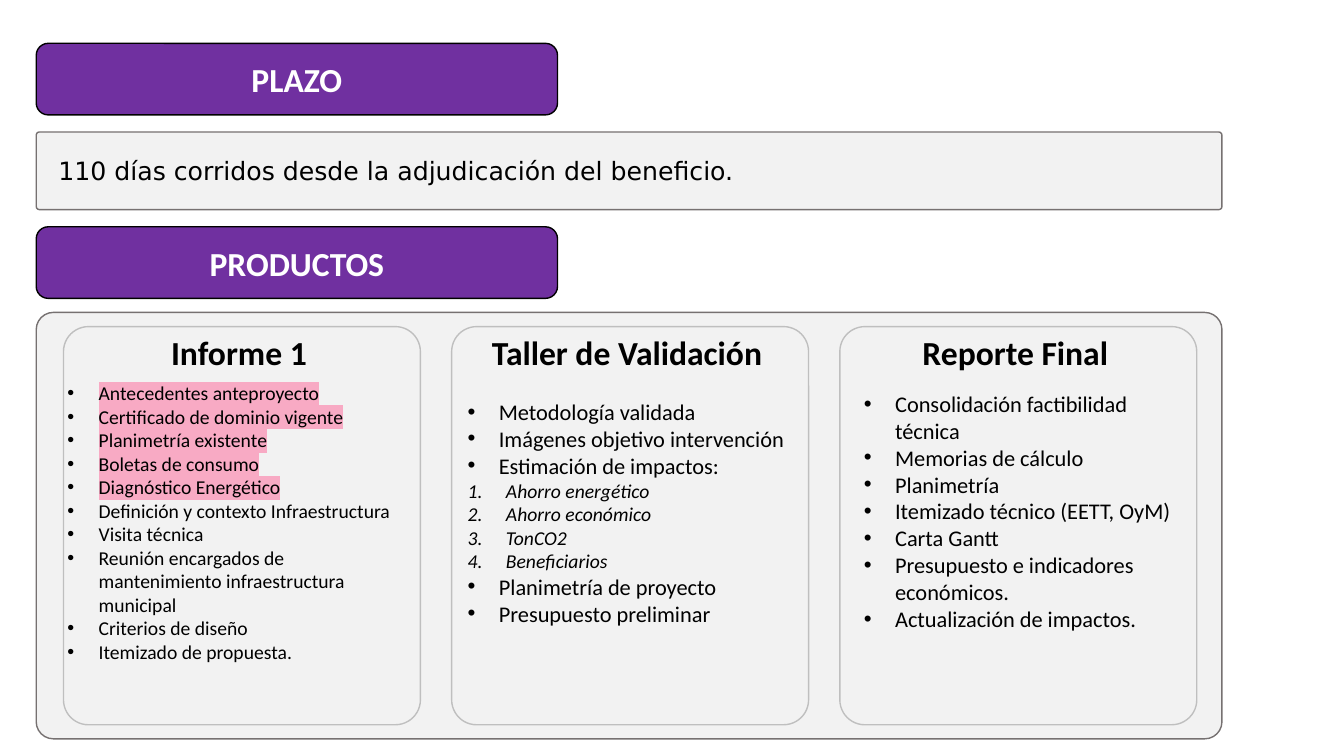
from dataclasses import dataclass

from lxml import etree
from pptx import Presentation
from pptx.dml.color import RGBColor
from pptx.enum.shapes import MSO_SHAPE
from pptx.enum.text import MSO_ANCHOR, MSO_AUTO_SIZE, PP_ALIGN
from pptx.oxml.ns import qn
from pptx.util import Inches, Pt

ROUNDED = MSO_SHAPE.ROUNDED_RECTANGLE
MIDDLE, TOP = MSO_ANCHOR.MIDDLE, MSO_ANCHOR.TOP
FIT_SHAPE = MSO_AUTO_SIZE.SHAPE_TO_FIT_TEXT
LEFT, CENTER, JUSTIFY = PP_ALIGN.LEFT, PP_ALIGN.CENTER, PP_ALIGN.JUSTIFY

PURPLE = RGBColor(0x70, 0x30, 0xA0)
PANEL_GREY = RGBColor(0xF2, 0xF2, 0xF2)
PANEL_EDGE = RGBColor(0x76, 0x71, 0x71)
CARD_EDGE = RGBColor(0xBF, 0xBF, 0xBF)
BLACK = RGBColor(0, 0, 0)
WHITE = RGBColor(0xFF, 0xFF, 0xFF)
PINK = RGBColor(0xF8, 0xAA, 0xC4)

# Grid in inches: section rows down the slide, card columns across it
MARGIN, PANEL_WIDTH = 0.36, 11.76
BANNER_TOP, SECTION_STEP = 0.43, 1.82
CARD_LEFT, CARD_STEP, CARD_TOP = 0.63, 3.85, 3.24

HEADING = {"name": "Calibri", "size": Pt(24), "bold": True}
DEADLINE = {"name": "DejaVu Sans", "size": Pt(18)}
SMALL = {"name": "Calibri", "size": Pt(14)}
NORMAL = {"name": "Calibri", "size": Pt(16)}
NUMBERED = {**SMALL, "italic": True}


@dataclass(frozen=True)
class Box:
    left: float
    top: float
    width: float
    height: float

    def lengths(self) -> list:
        return [Inches(n) for n in (self.left, self.top, self.width, self.height)]


@dataclass(frozen=True)
class Group:
    """Consecutive list items that share one format."""
    items: tuple
    style: dict
    numbered: bool = False
    highlight: RGBColor | None = None


@dataclass(frozen=True)
class Card:
    heading: str
    body: Box
    groups: tuple


CARDS = (
    Card("Informe 1", Box(0.57, 3.73, 3.52, 3.2), (
        Group(("Antecedentes anteproyecto", "Certificado de dominio vigente",
               "Planimetría existente", "Boletas de consumo",
               "Diagnóstico Energético"), SMALL, highlight=PINK),
        Group(("Definición y contexto Infraestructura", "Visita técnica",
               "Reunión encargados de mantenimiento infraestructura municipal",
               "Criterios de diseño", "Itemizado de propuesta."), SMALL),
    )),
    Card("Taller de Validación", Box(4.54, 3.9, 3.46, 2.76), (
        Group(("Metodología validada", "Imágenes objetivo intervención",
               "Estimación de impactos:"), NORMAL),
        Group(("Ahorro energético", "Ahorro económico", "TonCO2",
               "Beneficiarios"), NUMBERED, numbered=True),
        Group(("Planimetría de proyecto", "Presupuesto preliminar"), NORMAL),
    )),
    Card("Reporte Final", Box(8.47, 3.82, 3.37, 2.52), (
        Group(("Consolidación factibilidad técnica", "Memorias de cálculo",
               "Planimetría", "Itemizado técnico (EETT, OyM)", "Carta Gantt",
               "Presupuesto e indicadores económicos.",
               "Actualización de impactos."), NORMAL),
    )),
)


def add_panel(slide, box: Box, fill: RGBColor, edge: RGBColor,
              rounding: float | None = None):
    panel = slide.shapes.add_shape(ROUNDED, *box.lengths())
    panel.shadow.inherit = False
    panel.fill.solid()
    panel.fill.fore_color.rgb = fill
    panel.line.color.rgb = edge
    panel.line.width = Pt(1)
    if rounding is not None:
        panel.adjustments[0] = rounding
    return panel


def add_text_frame(slide, box: Box):
    frame = slide.shapes.add_textbox(*box.lengths()).text_frame
    frame.word_wrap = True
    frame.auto_size = FIT_SHAPE
    frame.vertical_anchor = TOP
    return frame


def write(paragraph, text: str, style: dict, color: RGBColor = BLACK,
          align: PP_ALIGN = LEFT):
    paragraph.alignment = align
    run = paragraph.add_run()
    run.text = text
    for attribute, value in style.items():
        setattr(run.font, attribute, value)
    run.font.color.rgb = color
    return run


def set_marker(paragraph, numbered: bool) -> None:
    properties = paragraph._p.get_or_add_pPr()
    indent = Inches(0.38 if numbered else 0.31)
    properties.set("marL", str(indent))
    properties.set("indent", str(-indent))
    if numbered:
        etree.SubElement(properties, qn("a:buFont"), typeface="+mj-lt")
        etree.SubElement(properties, qn("a:buAutoNum"), type="arabicPeriod")
    else:
        etree.SubElement(properties, qn("a:buFont"), typeface="Arial")
        etree.SubElement(properties, qn("a:buChar"), char="•")


def set_highlight(run, color: RGBColor) -> None:
    # The highlight element must follow the text fill
    highlight = etree.Element(qn("a:highlight"))
    etree.SubElement(highlight, qn("a:srgbClr"), val=str(color))
    run.font._element.find(qn("a:solidFill")).addnext(highlight)


def add_list(slide, box: Box, groups: tuple) -> None:
    frame = add_text_frame(slide, box)
    entries = [(group, item) for group in groups for item in group.items]
    for index, (group, item) in enumerate(entries):
        paragraph = frame.add_paragraph() if index else frame.paragraphs[0]
        run = write(paragraph, item, group.style)
        set_marker(paragraph, group.numbered)
        if group.highlight is not None:
            set_highlight(run, group.highlight)


def main() -> None:
    presentation = Presentation()
    presentation.slide_width = Inches(13.33)
    presentation.slide_height = Inches(7.5)
    slide = presentation.slides.add_slide(presentation.slide_layouts[6])

    # Section banners, each above its panel
    sections = (("PLAZO", 1.31, 0.77), ("PRODUCTOS", 3.1, 4.23))
    for row, (title, panel_top, panel_height) in enumerate(sections):
        banner_box = Box(MARGIN, BANNER_TOP + row * SECTION_STEP, 5.17, 0.71)
        banner = add_panel(slide, banner_box, PURPLE, BLACK)
        banner.text_frame.vertical_anchor = MIDDLE
        write(banner.text_frame.paragraphs[0], title, HEADING, WHITE, CENTER)
        add_panel(slide, Box(MARGIN, panel_top, PANEL_WIDTH, panel_height),
                  PANEL_GREY, PANEL_EDGE, 0.04)

    # Deadline sentence
    deadline = add_text_frame(slide, Box(0.48, 1.49, 11.64, 0.4)).paragraphs[0]
    deadline.space_before = deadline.space_after = Pt(6)
    write(deadline, "110 días corridos desde la adjudicación del beneficio.",
          DEADLINE, align=JUSTIFY)

    # Product cards
    for column, card in enumerate(CARDS):
        left = CARD_LEFT + column * CARD_STEP
        add_panel(slide, Box(left, CARD_TOP, 3.54, 3.95),
                  PANEL_GREY, CARD_EDGE, 0.07)
        heading = add_text_frame(slide, Box(left - 0.02, CARD_TOP, 3.52, 0.5))
        write(heading.paragraphs[0], card.heading, HEADING, align=CENTER)
        add_list(slide, card.body, card.groups)

    presentation.save("out.pptx")


if __name__ == "__main__":
    main()
